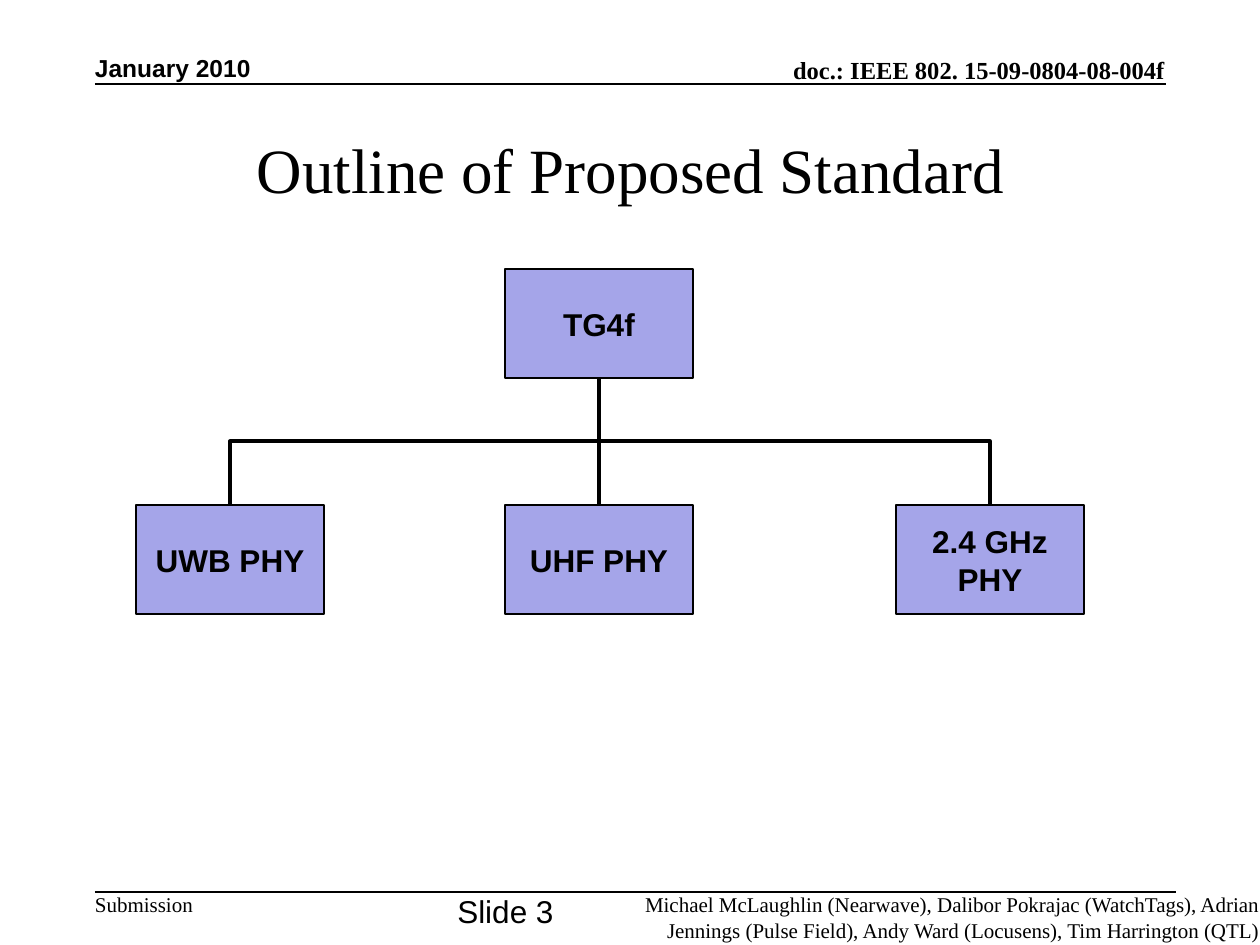
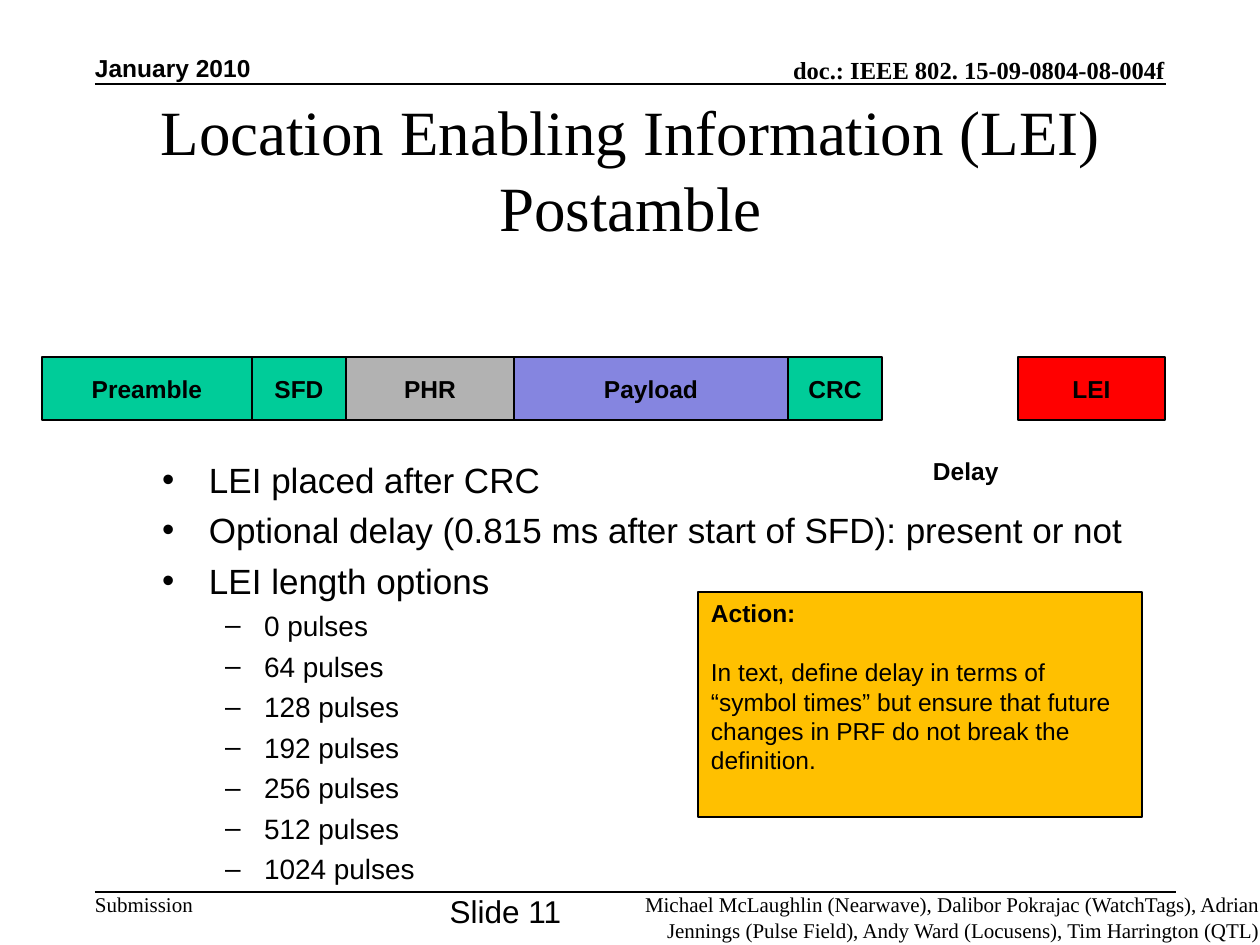
from pptx import Presentation
from pptx.dml.color import RGBColor
from pptx.enum.shapes import MSO_CONNECTOR, MSO_SHAPE
from pptx.enum.text import MSO_ANCHOR, MSO_AUTO_SIZE, PP_ALIGN
from pptx.oxml.ns import qn
from pptx.util import Emu, Pt
from lxml import etree

STRAIGHT, ELBOW = MSO_CONNECTOR.STRAIGHT, MSO_CONNECTOR.ELBOW
RECT = MSO_SHAPE.RECTANGLE
TOP, MID, BASE = MSO_ANCHOR.TOP, MSO_ANCHOR.MIDDLE, MSO_ANCHOR.BOTTOM
LEFT, CENTER, RIGHT = PP_ALIGN.LEFT, PP_ALIGN.CENTER, PP_ALIGN.RIGHT
NO_FIT = MSO_AUTO_SIZE.NONE

SCALE = 914400 / 126  # EMU in one px
SANS, SERIF = "Arial", "Times New Roman"
BLACK, LILAC, GREEN, GREY = "000000", "A5A5E9", "00CC99", "B2B2B2"
VIOLET, RED, AMBER = "8585E0", "FF0000", "FFC000"

AUTHORS = ("Michael McLaughlin (Nearwave), Dalibor Pokrajac (WatchTags), "
           "Adrian Jennings (Pulse Field), Andy Ward (Locusens), "
           "Tim Harrington (QTL)")
BOX_W, BOX_H = 188, 109


def px(n):
    return Emu(round(n * SCALE))


def color(code):
    return RGBColor.from_string(code)


def style(frame, size, font=SANS, bold=False, align=LEFT, anchor=TOP,
          wrap=True, pad=(13, 6)):
    """Format a text frame and every run in it."""
    frame.auto_size = NO_FIT
    frame.word_wrap = wrap
    frame.vertical_anchor = anchor
    frame.margin_left = frame.margin_right = px(pad[0])
    frame.margin_top = frame.margin_bottom = px(pad[1])
    for para in frame.paragraphs:
        para.alignment = align
        for run in para.runs:
            run.font.size = Pt(size)
            run.font.name = font
            run.font.bold = bold
            run.font.color.rgb = color(BLACK)


def label(slide, text, x, y, w, h, size, **look):
    frame = slide.shapes.add_textbox(px(x), px(y), px(w), px(h)).text_frame
    frame.text = text
    style(frame, size, **look)
    return frame


def box(slide, text, x, y, w, h, fill, size, line=1, **look):
    shape = slide.shapes.add_shape(RECT, px(x), px(y), px(w), px(h))
    shape.shadow.inherit = False
    shape.fill.solid()
    shape.fill.fore_color.rgb = color(fill)
    shape.line.color.rgb = color(BLACK)
    shape.line.width = Pt(line)
    shape.text_frame.text = text
    style(shape.text_frame, size, **look)
    return shape


def link(slide, kind, x1, y1, x2, y2, width):
    line = slide.shapes.add_connector(kind, px(x1), px(y1), px(x2), px(y2))
    line.line.color.rgb = color(BLACK)
    line.line.width = Pt(width)
    etree.SubElement(line._element.spPr, qn("a:effectLst"))
    return line


def branch(slide, parent, child):
    """Join the foot of the parent to the head of the child."""
    x1, y1 = parent.left + parent.width // 2, parent.top + parent.height
    x2, y2 = child.left + child.width // 2, child.top
    line = link(slide, STRAIGHT if x1 == x2 else ELBOW, 0, 0, 1, 1, 2.25)
    line.begin_connect(parent, 2)
    line.end_connect(child, 0)
    if x1 == x2:
        return
    # An upright elbow is a flat one turned by a quarter
    drop, span = y2 - y1, abs(x2 - x1)
    line.left = (x1 + x2 - drop) // 2
    line.top = (y1 + y2 - span) // 2
    line.width, line.height = drop, span
    form = line._element.spPr.find(qn("a:xfrm"))
    for key in ("flipH", "flipV"):
        form.attrib.pop(key, None)
    form.set("rot", "5400000" if x2 < x1 else "16200000")
    if x2 > x1:
        form.set("flipH", "1")


def bullet(para, mark, left, hang, gap):
    props = para._p.get_or_add_pPr()
    props.set("marL", str(px(left)))
    props.set("indent", str(-px(hang)))
    para.space_before = Pt(gap)
    etree.SubElement(props, qn("a:buFont")).set("typeface", SANS)
    etree.SubElement(props, qn("a:buChar")).set("char", mark)


def start(deck, title, number):
    """Add a slide with its title, header and footer."""
    slide = deck.slides.add_slide(deck.slide_layouts[5])
    head = slide.shapes.title
    head.left, head.top, head.width, head.height = map(px, (95, 95, 1071, 147))
    head.text_frame.text = title
    style(head.text_frame, 36, font=SERIF, align=CENTER, anchor=MID)

    # Header
    flat = {"pad": (0, 0)}
    label(slide, "January 2010", 95, 52, 220, 30, 14, bold=True,
          anchor=BASE, **flat)
    label(slide, "doc.: IEEE 802. 15-09-0804-08-004f", 505, 54, 660, 30, 14,
          font=SERIF, bold=True, align=RIGHT, anchor=BASE, **flat)
    link(slide, STRAIGHT, 95, 84, 1166, 84, 1)

    # Footer
    link(slide, STRAIGHT, 95, 892, 1176, 892, 1)
    label(slide, "Submission", 95, 892, 98, 25, 12, font=SERIF, **flat)
    label(slide, f"Slide {number}", 469, 892, 73, 25, 18, align=CENTER,
          wrap=False, **flat)
    label(slide, AUTHORS, 604, 892, 656, 50, 12, font=SERIF, align=RIGHT,
          **flat)
    return slide


def outline(deck):
    slide = start(deck, "Outline of Proposed Standard", 3)
    look = {"bold": True, "align": CENTER, "anchor": MID}
    root = box(slide, "TG4f", 505, 269, BOX_W, BOX_H, LILAC, 18, **look)
    for x, text in ((136, "UWB PHY"), (505, "UHF PHY"),
                    (896, "2.4 GHz\nPHY")):
        leaf = box(slide, text, x, 505, BOX_W, BOX_H, LILAC, 18, **look)
        branch(slide, root, leaf)


def postamble(deck):
    slide = start(deck, "Location Enabling Information (LEI) Postamble", 11)

    # Packet fields, with a delay before the last one
    x = 42
    for text, w, fill, gap in (("Preamble", 210, GREEN, 0),
                               ("SFD", 94, GREEN, 0),
                               ("PHR", 168, GREY, 0),
                               ("Payload", 274, VIOLET, 0),
                               ("CRC", 94, GREEN, 0),
                               ("LEI", 147, RED, 136)):
        x += gap
        box(slide, text, x, 357, w, 63, fill, 14, line=0.75, bold=True,
            align=CENTER, anchor=MID, wrap=False)
        x += w
    label(slide, "Delay", 920, 450, 91, 43, 14, bold=True, wrap=False)

    # Bullets
    points = ["LEI placed after CRC",
              "Optional delay (0.815 ms after start of SFD): present or not",
              "LEI length options"]
    sizes = [f"{n} pulses" for n in (0, 64, 128, 192, 256, 512, 1024)]
    frame = label(slide, "\n".join(points + sizes), 149, 452, 1017, 333, 20)
    for i, para in enumerate(frame.paragraphs):
        if i < len(points):
            bullet(para, "•", 47, 47, 5 if i else 0)
        else:
            para.level = 1
            bullet(para, "–", 102, 39, 4)
            para.runs[0].font.size = Pt(16)

    # Action note
    note = box(slide, "Action:\nIn text, define delay in terms of “symbol "
               "times” but ensure that future changes in PRF do not break "
               "the definition.", 698, 592, 444, 225, AMBER, 14)
    lead, body = note.text_frame.paragraphs
    lead.runs[0].font.bold = True
    body.space_before = Pt(17)


def main():
    deck = Presentation()
    deck.slide_width, deck.slide_height = px(1260), px(945)
    outline(deck)
    postamble(deck)
    deck.save("out.pptx")


if __name__ == "__main__":
    main()
